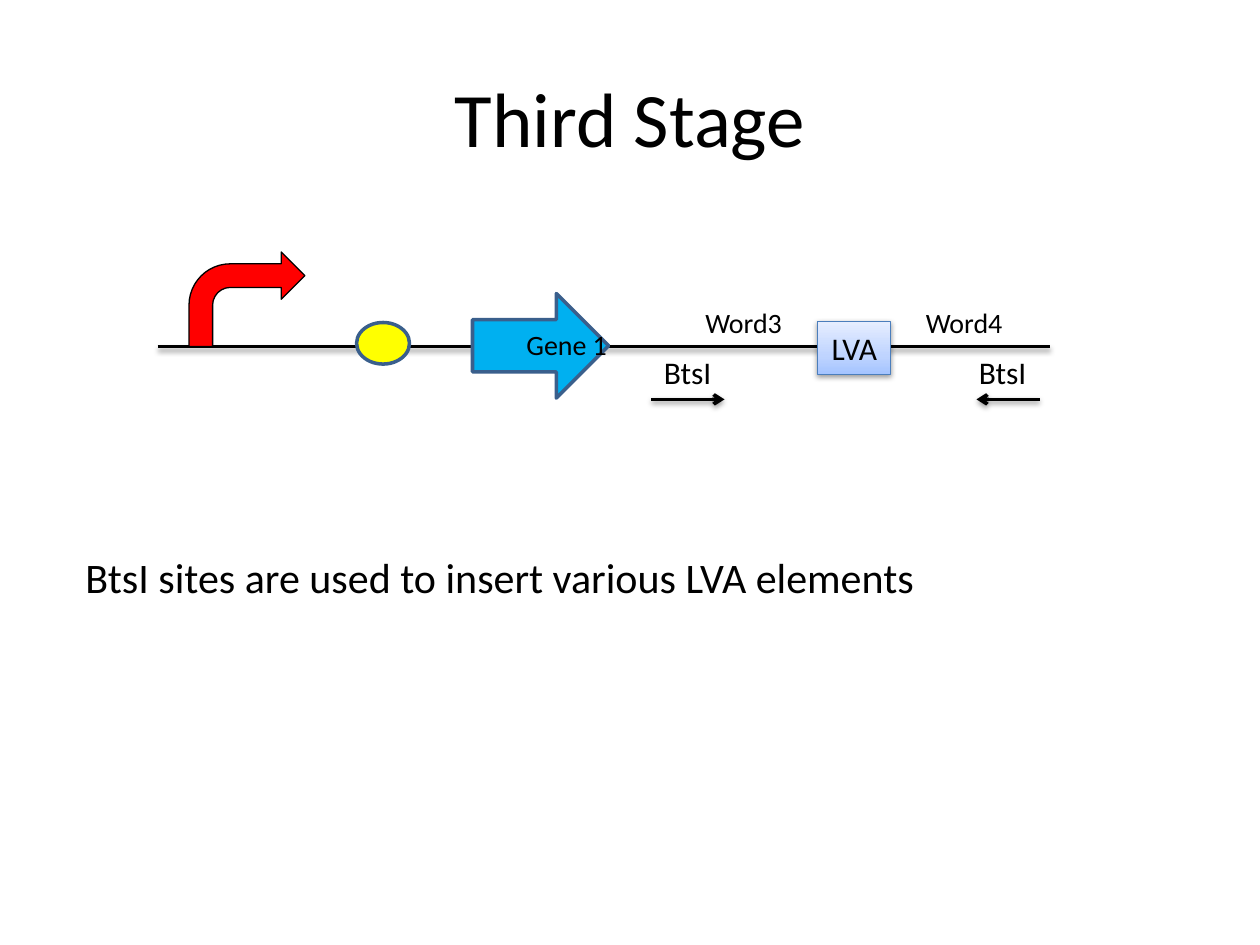
from copy import deepcopy

from lxml.etree import SubElement
from pptx import Presentation
from pptx.dml.color import RGBColor
from pptx.enum.shapes import MSO_CONNECTOR as Connector, MSO_SHAPE as Shape
from pptx.enum.text import MSO_ANCHOR as Anchor, MSO_AUTO_SIZE as AutoSize, PP_ALIGN as Align
from pptx.oxml.ns import qn
from pptx.util import Inches, Pt

BLACK = "000000"
OUTLINE = "3A5F8C"


def color(value):
    return RGBColor.from_string(value)


def set_text(shape, text, size, align=Align.LEFT, anchor=Anchor.TOP):
    frame = shape.text_frame
    for name, value in {"word_wrap": True, "vertical_anchor": anchor}.items():
        setattr(frame, name, value)
    paragraph = frame.paragraphs[0]
    paragraph.alignment = align
    run = paragraph.add_run()
    run.text = text
    for name, value in {"name": "Calibri", "size": Pt(size)}.items():
        setattr(run.font, name, value)
    run.font.color.rgb = color(BLACK)


def add_label(shapes, text, left, top, width, height, size, **placement):
    box = shapes.add_textbox(Inches(left), Inches(top), Inches(width), Inches(height))
    set_text(box, text, size, **placement)
    if "anchor" not in placement:
        box.text_frame.auto_size = AutoSize.SHAPE_TO_FIT_TEXT


def set_line(shape, line_color, width):
    shape.line.color.rgb = color(line_color)
    shape.line.width = Pt(width)


def add_shadow(shape):
    properties = shape.element.spPr
    effects = properties.find(qn("a:effectLst"))
    if effects is None:
        effects = SubElement(properties, qn("a:effectLst"))
    shadow = SubElement(effects, qn("a:outerShdw"), blurRad=str(Pt(3.1)),
                        dist=str(Pt(1.6)), dir="5400000", rotWithShape="0")
    shade = SubElement(shadow, qn("a:srgbClr"), val=BLACK)
    SubElement(shade, qn("a:alpha"), val="38000")


def add_line(shapes, start, end, y, arrow=False):
    line = shapes.add_connector(Connector.STRAIGHT, Inches(start), Inches(y),
                                Inches(end), Inches(y))
    set_line(line, BLACK, 2)
    if arrow:
        SubElement(line.element.spPr.find(qn("a:ln")), qn("a:tailEnd"), type="arrow")
    add_shadow(line)


def add_part(shapes, kind, left, top, width, height, fill, line_color, line_width):
    part = shapes.add_shape(kind, Inches(left), Inches(top), Inches(width), Inches(height))
    part.shadow.inherit = False
    if fill:
        part.fill.solid()
        part.fill.fore_color.rgb = color(fill)
    set_line(part, line_color, line_width)
    return part


def fill_gradient(shape, stops):
    shape.fill.gradient()
    shape.fill.gradient_angle = 90
    stop_list = next(shape.element.spPr.iter(qn("a:gsLst")))
    while len(stop_list) < len(stops):
        stop_list.append(deepcopy(stop_list[0]))
    for stop, (position, value) in zip(shape.fill.gradient_stops, stops):
        stop.position = position
        stop.color.rgb = color(value)


def add_primer_site(shapes, left, top, text_left, start, end):
    """A restriction site: its name above a direction arrow."""
    group = shapes.add_group_shape()
    add_label(group.shapes, "BtsI", left + text_left, top, 1, 0.4, 18)
    add_line(group.shapes, left + start, left + end, top + 0.42, arrow=True)


def add_construct(shapes, left, top):
    """The gene construct, placed from the top left of its box."""
    axis = top + 0.75
    add_line(shapes, left, left + 7.08, axis)

    # Gene and ribosome binding site
    add_part(shapes, Shape.RIGHT_ARROW, left + 2.5, top + 0.33, 1.08, 0.83,
             "00B0F0", OUTLINE, 2)
    add_part(shapes, Shape.OVAL, left + 1.58, top + 0.56, 0.42, 0.33,
             "FFFF00", OUTLINE, 2)
    add_label(shapes, "Gene 1", left + 2.83, top + 0.55, 0.96, 0.37, 16)

    # Words and insertion sites on both sides of the LVA element
    for text, offset in (("Word4", 6), ("Word3", 4.25)):
        add_label(shapes, text, left + offset, top + 0.38, 1, 0.37, 16)
    add_primer_site(shapes, left + 6.42, axis, 0, 0.58, 0.08)
    add_primer_site(shapes, left + 3.92, axis, 0, 0, 0.58)

    # LVA element
    element = add_part(shapes, Shape.RECTANGLE, left + 5.24, top + 0.55, 0.58, 0.42,
                       None, "4B7EBC", 0.75)
    fill_gradient(element, [(0, "A4C4FF"), (0.35, "BFD4FF"), (1, "E6EEFF")])
    add_shadow(element)
    set_text(element, "LVA", 18, Align.CENTER, Anchor.MIDDLE)

    # Promoter
    add_part(shapes, Shape.BENT_ARROW, left + 0.25, top, 0.92, 0.75,
             "FF0000", BLACK, 0.75)


def main():
    presentation = Presentation()
    presentation.slide_width = Inches(10)
    presentation.slide_height = Inches(7.5)
    slide = presentation.slides.add_slide(presentation.slide_layouts[6])

    add_label(slide.shapes, "Third Stage", 0.5, 0.3, 9, 1.25, 44,
              align=Align.CENTER, anchor=Anchor.MIDDLE)
    add_construct(slide.shapes, 1.25, 2)
    add_label(slide.shapes, "BtsI sites are used to insert various LVA elements",
              0.58, 4.33, 9, 0.5, 24)

    presentation.save("out.pptx")


if __name__ == "__main__":
    main()
